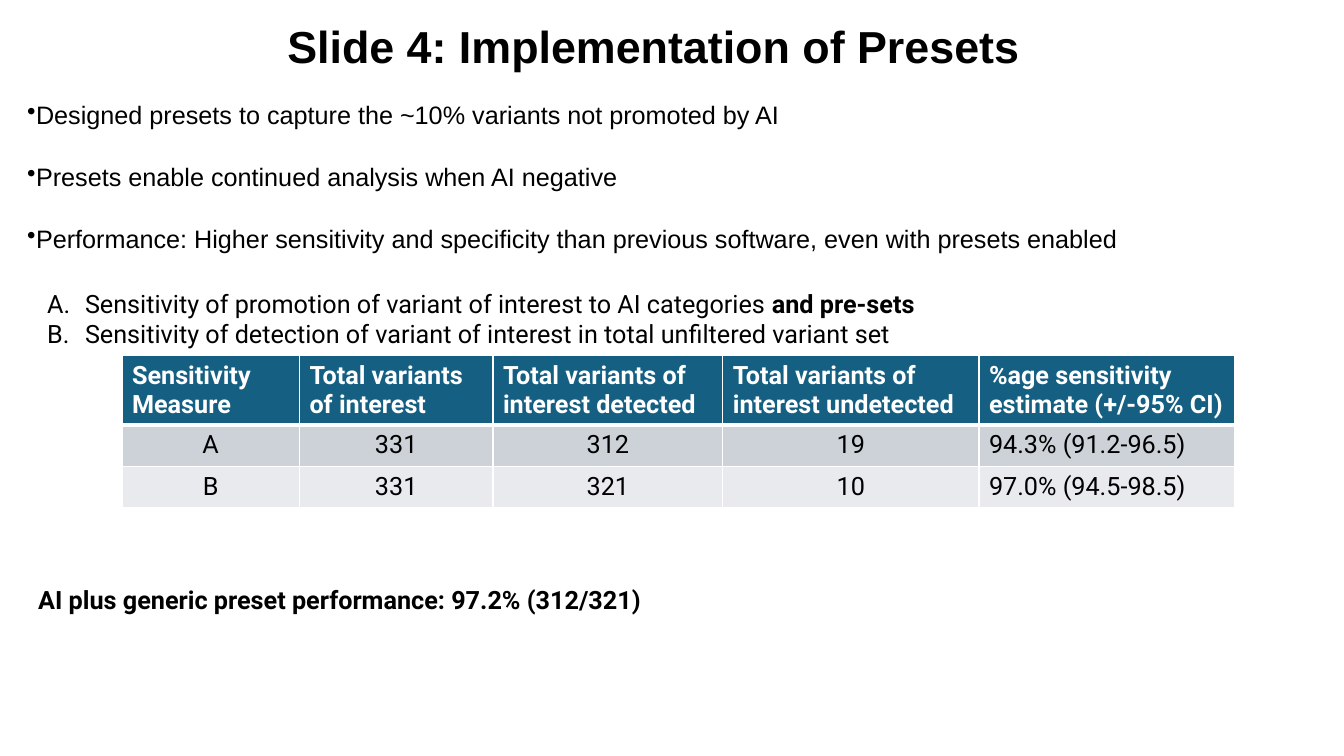
import pptx
import pptx.util
import pptx.oxml
import pptx.oxml.ns
import pptx.dml.color
import pptx.enum.text

COLORS = {"ink": "000000", "white": "FFFFFF", "header": "156082",
          "band_a": "CCD2D8", "band_b": "E8EAED"}
GRID = pptx.util.Inches(0.1)
ANCHOR = pptx.enum.text.MSO_ANCHOR
ALIGN = pptx.enum.text.PP_ALIGN


def write(paragraph, text, color="ink", **font_format):
    run = paragraph.add_run()
    run.text = text
    for name, value in {"size": pptx.util.Pt(18), "name": "Roboto", "bold": False, **font_format}.items():
        setattr(run.font, name, value)
    run.font.color.rgb = pptx.dml.color.RGBColor.from_string(COLORS[color])


def add_xml(parent, tag, **attributes):
    element = pptx.oxml.parse_xml(f'<a:{tag} {pptx.oxml.ns.nsdecls("a")}/>')
    for name, value in attributes.items():
        element.set(name, str(value))
    parent.append(element)
    return element


presentation = pptx.Presentation()
presentation.slide_width = pptx.util.Inches(13.33)
presentation.slide_height = pptx.util.Inches(7.5)
slide = presentation.slides.add_slide(presentation.slide_layouts[5])

places = {
    "title": (27.5, 1.4, 79.7, 6.4),
    "bullets": (1.7, 9.4, 111.2, 16.2),
    "measures": (3.7, 28.1, 89.3, 10.1),
    "summary": (2.8, 57.5, 79.9, 4),
}
frames = {}
for name, place in places.items():
    shape = slide.shapes.title if name == "title" else slide.shapes.add_textbox(0, 0, 0, 0)
    shape.left, shape.top, shape.width, shape.height = [int(GRID * steps) for steps in place]
    frame_format = {
        "word_wrap": True,
        "auto_size": pptx.enum.text.MSO_AUTO_SIZE.NONE,
        "vertical_anchor": ANCHOR.MIDDLE if name == "bullets" else ANCHOR.TOP,
    }
    for attribute, value in frame_format.items():
        setattr(shape.text_frame, attribute, value)
    frames[name] = shape.text_frame

title = frames["title"].paragraphs[0]
title.alignment = ALIGN.LEFT
write(title, "Slide 4: Implementation of Presets", size=pptx.util.Pt(32), name="Arial", bold=True)

bullets = [
    "Designed presets to capture the ~10% variants not promoted by AI",
    "Presets enable continued analysis when AI negative",
    "Performance: Higher sensitivity and specificity than previous software, even with presets enabled",
]
for index, text in enumerate(bullets):
    paragraph = frames["bullets"].add_paragraph() if index else frames["bullets"].paragraphs[0]
    if index:
        paragraph.space_before = pptx.util.Pt(22.7)
    add_xml(paragraph._p.get_or_add_pPr(), "buChar", char="•")
    write(paragraph, text, name="Arial")

measures = [
    ("Sensitivity of promotion of variant of interest to AI categories ", "and pre-sets"),
    ("Sensitivity of detection of variant of interest in total unfiltered variant set", ""),
]
for index, (text, emphasis) in enumerate(measures):
    paragraph = frames["measures"].add_paragraph() if index else frames["measures"].paragraphs[0]
    properties = paragraph._p.get_or_add_pPr()
    indent = int(GRID * 3.75)
    properties.set("marL", str(indent))
    properties.set("indent", str(-indent))
    add_xml(properties, "buFont", typeface="Roboto")
    add_xml(properties, "buAutoNum", type="alphaUcPeriod")
    write(paragraph, text)
    if emphasis:
        write(paragraph, emphasis, bold=True)

write(frames["summary"].paragraphs[0], "AI plus generic preset performance: 97.2% (312/321)", bold=True)

rows = [
    ("Sensitivity Measure", "Total variants of interest", "Total variants of interest detected",
     "Total variants of interest undetected", "%age sensitivity estimate (+/-95% CI)"),
    ("A", "331", "312", "19", "94.3% (91.2-96.5)"),
    ("B", "331", "321", "10", "97.0% (94.5-98.5)"),
]
column_steps = [17.6, 19.2, 22.8, 25.4, 25.4]
row_steps = [6.9, 4.1, 4.1]
row_fills = ["header", "band_a", "band_b"]
table_place = (12.1, 35.3, sum(column_steps), sum(row_steps))
table = slide.shapes.add_table(len(rows), len(column_steps), *[int(GRID * steps) for steps in table_place]).table
for column, steps in zip(table.columns, column_steps):
    column.width = int(GRID * steps)
for row_index, texts in enumerate(rows):
    table.rows[row_index].height = int(GRID * row_steps[row_index])
    is_header = row_index == 0
    for column_index, text in enumerate(texts):
        cell = table.cell(row_index, column_index)
        properties = cell._tc.get_or_add_tcPr()
        for side in "LRTB":
            thick = (side == "B" and is_header) or (side == "T" and row_index == 1)
            line = add_xml(properties, f"ln{side}", w=int(pptx.util.Pt(3 if thick else 1)))
            add_xml(add_xml(line, "solidFill"), "srgbClr", val=COLORS["white"])
        cell.fill.solid()
        cell.fill.fore_color.rgb = pptx.dml.color.RGBColor.from_string(COLORS[row_fills[row_index]])
        paragraph = cell.text_frame.paragraphs[0]
        centered = not is_header and column_index < len(texts) - 1
        paragraph.alignment = ALIGN.CENTER if centered else ALIGN.LEFT
        write(paragraph, text, color="white" if is_header else "ink", bold=is_header)

presentation.save("out.pptx")
